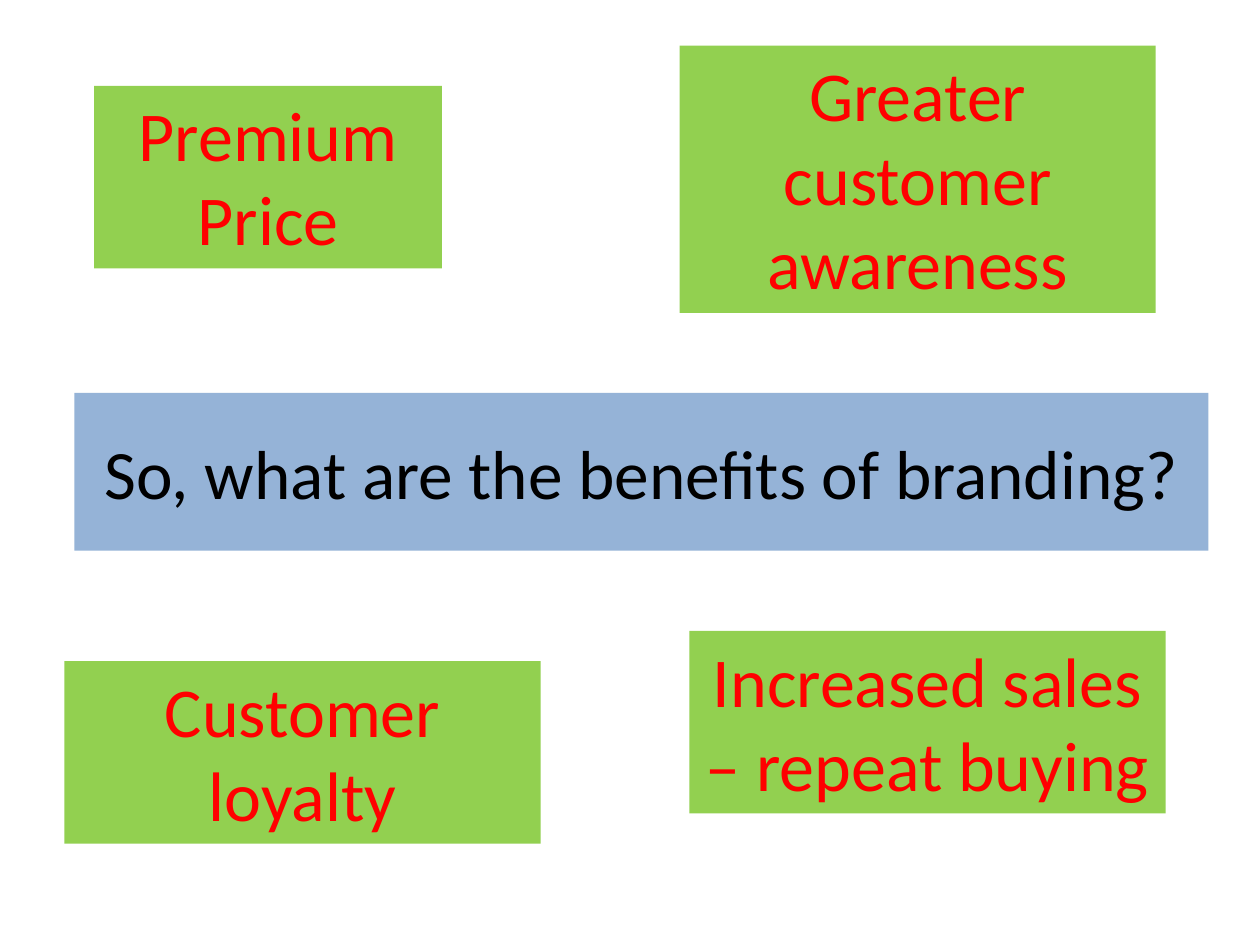
"""Builds a slide on the benefits of branding."""
from dataclasses import dataclass

from pptx import Presentation
from pptx import util as u
from pptx.dml.color import RGBColor
from pptx.enum import text


@dataclass(frozen=True)
class Theme:
    font: str = "Calibri"
    title_size: float = 39.6
    benefit_size: float = 40
    title_fill: str = "95B3D7"
    title_text: str = "000000"
    benefit_fill: str = "92D050"
    benefit_text: str = "FF0000"


THEME = Theme()
TITLE = "So, what are the benefits of branding?"
BENEFITS = [
    ("Premium Price", 1.9, 1.73, 7.01, 3.68),
    ("Greater customer awareness", 13.7, 0.92, 9.6, 5.39),
    ("Customer loyalty", 1.3, 13.33, 9.6, 3.68),
    ("Increased sales – repeat buying", 13.9, 12.72, 9.6, 3.68),
]


def fill_panel(sp, wording, fill, color, size):
    sp.fill.solid()
    sp.fill.fore_color.rgb = RGBColor.from_string(fill)
    tf = sp.text_frame
    tf.text = wording
    tf.word_wrap = True
    p = tf.paragraphs[0]
    p.alignment = text.PP_ALIGN.CENTER
    p.font.name = THEME.font
    p.font.size = u.Pt(size)
    p.font.color.rgb = RGBColor.from_string(color)
    return tf


def set_title(s):
    sp = s.shapes.title
    sp.left, sp.top, sp.width, sp.height = map(u.Cm, (1.5, 7.92, 22.86, 3.18))
    tf = fill_panel(sp, TITLE, THEME.title_fill, THEME.title_text, THEME.title_size)
    tf.auto_size = text.MSO_AUTO_SIZE.NONE
    tf.vertical_anchor = text.MSO_ANCHOR.MIDDLE


def add_benefit(s, wording, *box):
    sp = s.shapes.add_textbox(*map(u.Cm, box))
    tf = fill_panel(sp, wording, THEME.benefit_fill, THEME.benefit_text, THEME.benefit_size)
    tf.auto_size = text.MSO_AUTO_SIZE.SHAPE_TO_FIT_TEXT


def main():
    prs = Presentation()
    prs.slide_width, prs.slide_height = u.Cm(25.4), u.Cm(19.05)
    s = prs.slides.add_slide(prs.slide_layouts[5])
    set_title(s)
    for benefit in BENEFITS:
        add_benefit(s, *benefit)
    prs.save("out.pptx")


if __name__ == "__main__":
    main()
